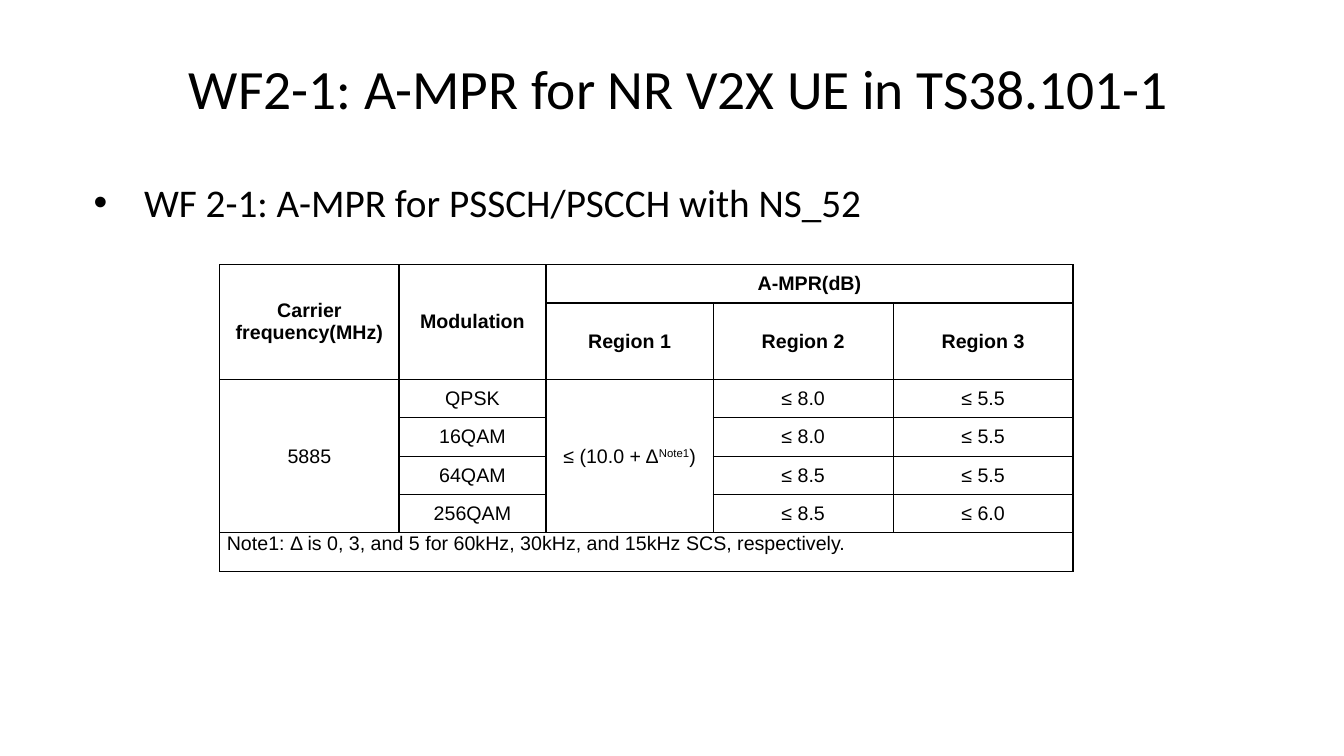
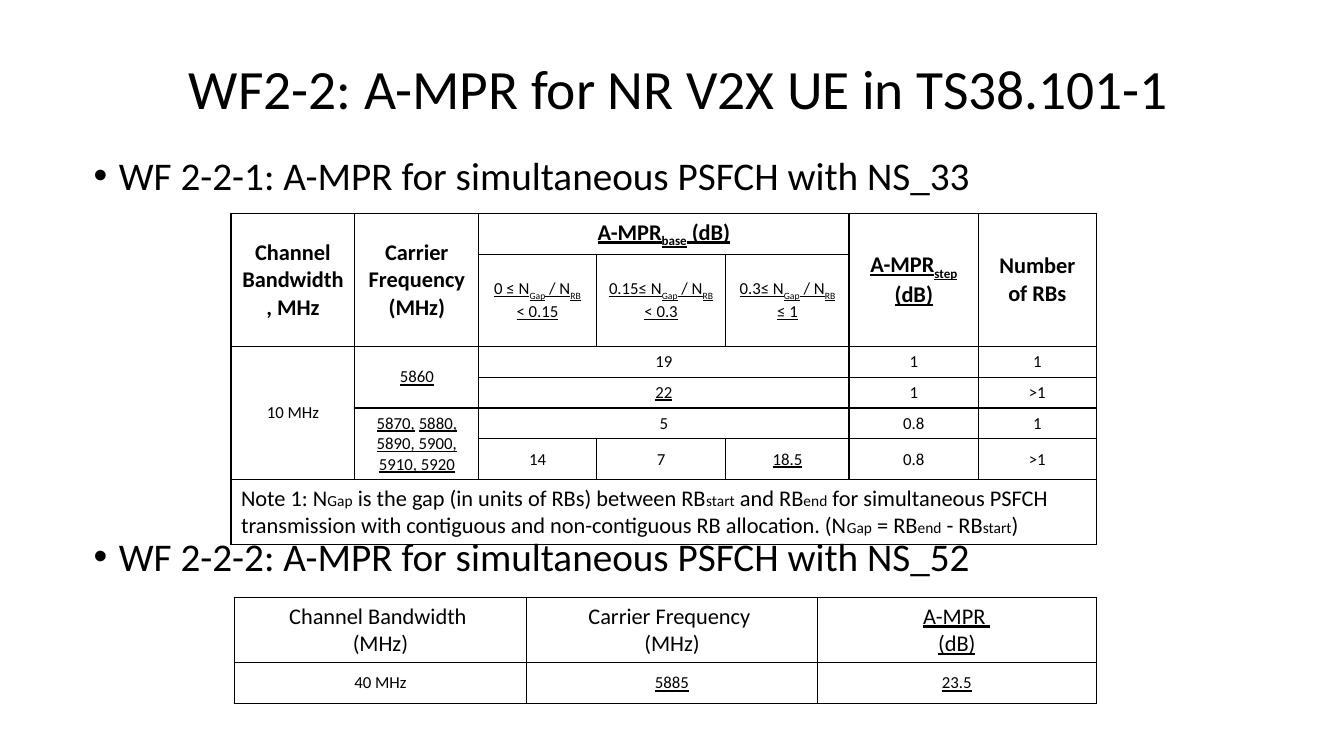
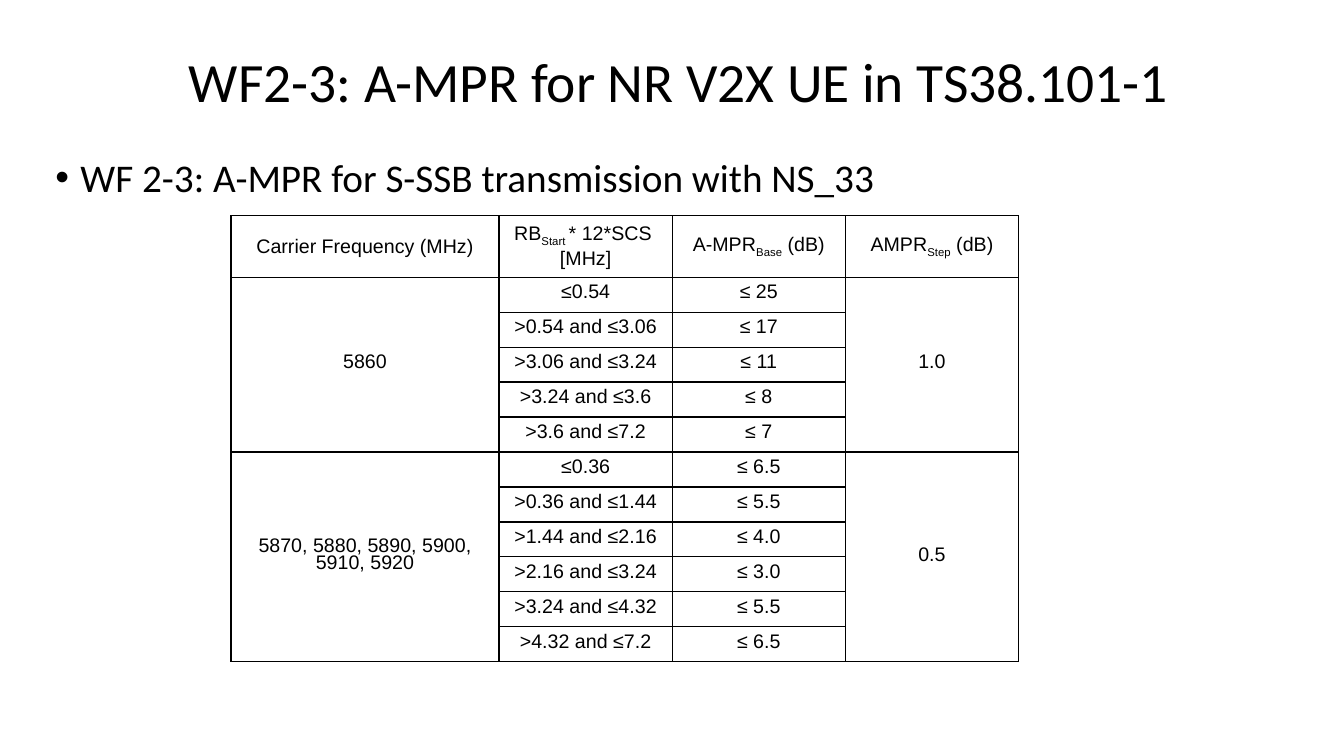
"""Builds three slides of A-MPR requirement tables."""
from lxml import etree
from pptx import Presentation
from pptx import util as u
from pptx.dml.color import RGBColor
from pptx.enum import text
from pptx.oxml import ns

COLOURS = {"ink": "000000"}
INK = RGBColor.from_string(COLOURS["ink"])
HEADING_FONT = "Calibri"
LEFT, UP = "←", "↑"
BASELINES = {"_": "-25000", "^": "30000"}
SMALL, PLAIN, UNDERLINED = "~", "!", "+"
TIGHT_INSETS = (5, 0)
LOOSE_INSETS = (7.2, 3.6)


def set_font(para, name, size, bold=False):
    """Format a whole paragraph."""
    para.font.name = name
    para.font.size = u.Pt(size)
    para.font.bold = bold
    para.font.color.rgb = INK


def add_slide(deck, title, top=36):
    """Add a title-only slide with the shared title style."""
    page = deck.slides.add_slide(deck.slide_layouts[5])
    box = page.shapes.title
    box.left, box.top = u.Pt(96.5), u.Pt(top)
    box.width, box.height = u.Pt(777), u.Pt(58.3)
    frame = box.text_frame
    frame.text = title
    frame.auto_size = text.MSO_AUTO_SIZE.NONE
    frame.vertical_anchor = text.MSO_ANCHOR.MIDDLE
    para = frame.paragraphs[0]
    para.alignment = text.PP_ALIGN.CENTER
    para.line_spacing = 0.9
    set_font(para, HEADING_FONT, 39.6)
    return page


def add_bullet(page, wording, left, top, indent=18):
    """Place one bulleted line with a hanging indent."""
    box = page.shapes.add_textbox(u.Pt(left), u.Pt(top), u.Pt(843), u.Pt(42))
    frame = box.text_frame
    frame.word_wrap = True
    frame.text = wording
    para = frame.paragraphs[0]
    props = para._p.get_or_add_pPr()
    props.set("marL", str(u.Pt(indent)))
    props.set("indent", str(-u.Pt(indent)))
    etree.SubElement(props, ns.qn("a:buFont"), typeface="Arial")
    etree.SubElement(props, ns.qn("a:buChar"), char="•")
    set_font(para, HEADING_FONT, 28)


def draw_borders(cell):
    """Give a cell thin lines on all sides and no fill."""
    props = cell._tc.get_or_add_tcPr()
    for side in ("lnL", "lnR", "lnT", "lnB"):
        line = etree.SubElement(props, ns.qn("a:" + side), w=str(u.Pt(1)))
        fill = etree.SubElement(line, ns.qn("a:solidFill"))
        etree.SubElement(fill, ns.qn("a:srgbClr"), val=COLOURS["ink"])
    cell.fill.background()


def write_spans(para, wording, underlined):
    """Split a line at bars into spans; a leading mark sets the span's style."""
    for piece in wording.split("|"):
        mark = piece[:1]
        marked = mark in (*BASELINES, SMALL, PLAIN)
        span = para.add_run()
        span.text = piece[1:] if marked else piece
        if underlined and mark != PLAIN:
            span.font.underline = True
        if mark in BASELINES:
            span.font._element.set("baseline", BASELINES[mark])
        if mark == SMALL:
            span.font.size = u.Pt(11)


def fill_cell(cell, wording, font, size, bold, align, leading):
    """Write the paragraphs of one cell."""
    underlined = wording.startswith(UNDERLINED)
    lines = wording.removeprefix(UNDERLINED).split("\n")
    for index, line in enumerate(lines):
        frame = cell.text_frame
        para = frame.add_paragraph() if index else frame.paragraphs[0]
        para.alignment = align
        if leading:
            para.line_spacing = u.Pt(leading)
        set_font(para, font, size, bold)
        write_spans(para, line, underlined)


def count_marks(cells, mark):
    """Count the merge marks that follow directly."""
    count = 0
    for wording in cells:
        if wording != mark:
            break
        count += 1
    return count


def add_grid(page, left, top, widths, heights, rows, font, sizes, insets,
             bold_rows=(), note_anchor=None, leading=None):
    """Place a ruled table; arrows in the rows merge cells left or up."""
    table = page.shapes.add_table(
        len(heights), len(widths), u.Pt(left), u.Pt(top),
        u.Pt(sum(widths)), u.Pt(sum(heights))).table
    table.first_row = table.horz_banding = False
    for column, width in zip(table.columns, widths):
        column.width = u.Pt(width)
    for row, height in zip(table.rows, heights):
        row.height = u.Pt(height)
    for r, row in enumerate(rows):
        note = note_anchor is not None and r == len(rows) - 1
        for c, wording in enumerate(row):
            cell = table.cell(r, c)
            draw_borders(cell)
            cell.margin_left = cell.margin_right = u.Pt(insets[0])
            cell.margin_top = cell.margin_bottom = u.Pt(insets[1])
            cell.vertical_anchor = note_anchor if note else text.MSO_ANCHOR.MIDDLE
            if wording in (LEFT, UP):
                set_font(cell.text_frame.paragraphs[0], font, sizes[r])
                continue
            align = text.PP_ALIGN.LEFT if note else text.PP_ALIGN.CENTER
            fill_cell(cell, wording, font, sizes[r], r in bold_rows, align,
                      leading if r else None)
            across = count_marks(row[c + 1:], LEFT)
            down = count_marks([below[c] for below in rows[r + 1:]], UP)
            if across or down:
                cell.merge(table.cell(r + down, c + across))


def build_data_channel_slide(deck):
    """A-MPR for PSSCH/PSCCH."""
    page = add_slide(deck, "WF2-1: A-MPR for NR V2X UE in TS38.101-1")
    add_bullet(page, "WF 2-1: A-MPR for PSSCH/PSCCH with NS_52", 59.8, 123.8, 36)
    rows = [
        ["Carrier frequency(MHz)", "Modulation", "A-MPR(dB)", LEFT, LEFT],
        [UP, UP, "Region 1", "Region 2", "Region 3"],
        ["5885", "QPSK", "≤ (10.0 + Δ|^Note1|)", "≤ 8.0", "≤ 5.5"],
        [UP, "16QAM", UP, "≤ 8.0", "≤ 5.5"],
        [UP, "64QAM", UP, "≤ 8.5", "≤ 5.5"],
        [UP, "256QAM", UP, "≤ 8.5", "≤ 6.0"],
        ["Note1: Δ is 0, 3, and 5 for 60kHz, 30kHz, and 15kHz SCS, respectively.",
         LEFT, LEFT, LEFT, LEFT],
    ]
    add_grid(page, 157, 189, [128, 105, 119.5, 128.5, 128.5],
             [27.4, 54.7] + [27.4] * 5, rows, "Arial", [14] * 7, TIGHT_INSETS,
             bold_rows=(0, 1), note_anchor=text.MSO_ANCHOR.TOP)


def build_feedback_slide(deck):
    """A-MPR for simultaneous PSFCH."""
    page = add_slide(deck, "WF2-2: A-MPR for NR V2X UE in TS38.101-1")
    for band, top in (("1: A-MPR for simultaneous PSFCH with NS_33", 104.4),
                      ("2: A-MPR for simultaneous PSFCH with NS_52", 376.5)):
        add_bullet(page, "WF 2-2-" + band, 59.8, top)
    gap = "N|_Gap| / N|_RB| "
    rows = [
        ["Channel Bandwidth, MHz", "Carrier Frequency (MHz)",
         "+A-MPR|_base| (dB)", LEFT, LEFT, "+A-MPR|_step |(dB)", "Number of RBs"],
        [UP, UP, f"+0 ≤ {gap}< 0.15", f"+0.15≤ {gap}< 0.3", f"+0.3≤ {gap}≤ 1",
         UP, UP],
        ["10 MHz", "+5860", "19", LEFT, LEFT, "1", "1"],
        [UP, UP, "+22", LEFT, LEFT, "1", ">1"],
        [UP, "+5870,|! |5880,\n5890, 5900,\n5910, 5920", "5", LEFT, LEFT,
         "0.8", "1"],
        [UP, UP, "14", "7", "+18.5", "0.8", ">1"],
        ["Note 1: N|~Gap| is the gap (in units of RBs) between RB|~start| and RB"
         "|~end| for simultaneous PSFCH transmission with contiguous and "
         "non-contiguous RB allocation. (N|~Gap| = RB|~end| - RB|~start|)"]
        + [LEFT] * 6,
    ]
    add_grid(page, 165, 152.5, [88.5, 88.5, 84, 92.5, 88, 92.5, 84],
             [29.3, 65.7, 22, 22, 22, 29.3, 46.3], rows, HEADING_FONT,
             [16] + [12] * 5 + [16], LOOSE_INSETS,
             bold_rows=(0,), note_anchor=text.MSO_ANCHOR.MIDDLE)
    rows = [
        ["Channel Bandwidth \n(MHz)", "Carrier Frequency \n(MHz)", "+A-MPR \n(dB)"],
        ["40 MHz", "+5885", "+23.5"],
    ]
    add_grid(page, 167.5, 427, [208.5, 208, 199], [46.3, 29.3], rows,
             HEADING_FONT, [16, 12], LOOSE_INSETS)


def build_sync_slide(deck):
    """A-MPR for S-SSB transmission."""
    page = add_slide(deck, "WF2-3: A-MPR for NR V2X UE in TS38.101-1", 31)
    add_bullet(page, "WF 2-3: A-MPR for S-SSB transmission with NS_33", 32.4, 105.8)
    rows = [
        ["Carrier Frequency (MHz)", "RB|_Start |* 12*SCS \n[MHz]",
         "A-MPR|_Base| (dB)", "AMPR|_Step| (dB)"],
        ["5860", "≤0.54", "≤ 25", "1.0"],
        [UP, ">0.54 and ≤3.06", "≤ 17", UP],
        [UP, ">3.06 and ≤3.24", "≤ 11", UP],
        [UP, ">3.24 and ≤3.6", "≤ 8", UP],
        [UP, ">3.6 and ≤7.2", "≤ 7", UP],
        ["5870, 5880, 5890, 5900, 5910, 5920", "≤0.36", "≤ 6.5", "0.5"],
        [UP, ">0.36 and ≤1.44", "≤ 5.5", UP],
        [UP, ">1.44 and ≤2.16", "≤ 4.0", UP],
        [UP, ">2.16 and ≤3.24", "≤ 3.0", UP],
        [UP, ">3.24 and ≤4.32", "≤ 5.5", UP],
        [UP, ">4.32 and ≤7.2", "≤ 6.5", UP],
    ]
    add_grid(page, 165, 154, [191.5] + [123.7] * 3, [44] + [25] * 11, rows,
             "Arial", [14] * 12, TIGHT_INSETS, leading=12)


def main():
    """Build and save the deck."""
    deck = Presentation()
    deck.slide_width, deck.slide_height = u.Pt(960), u.Pt(540)
    build_data_channel_slide(deck)
    build_feedback_slide(deck)
    build_sync_slide(deck)
    deck.save("out.pptx")


if __name__ == "__main__":
    main()
